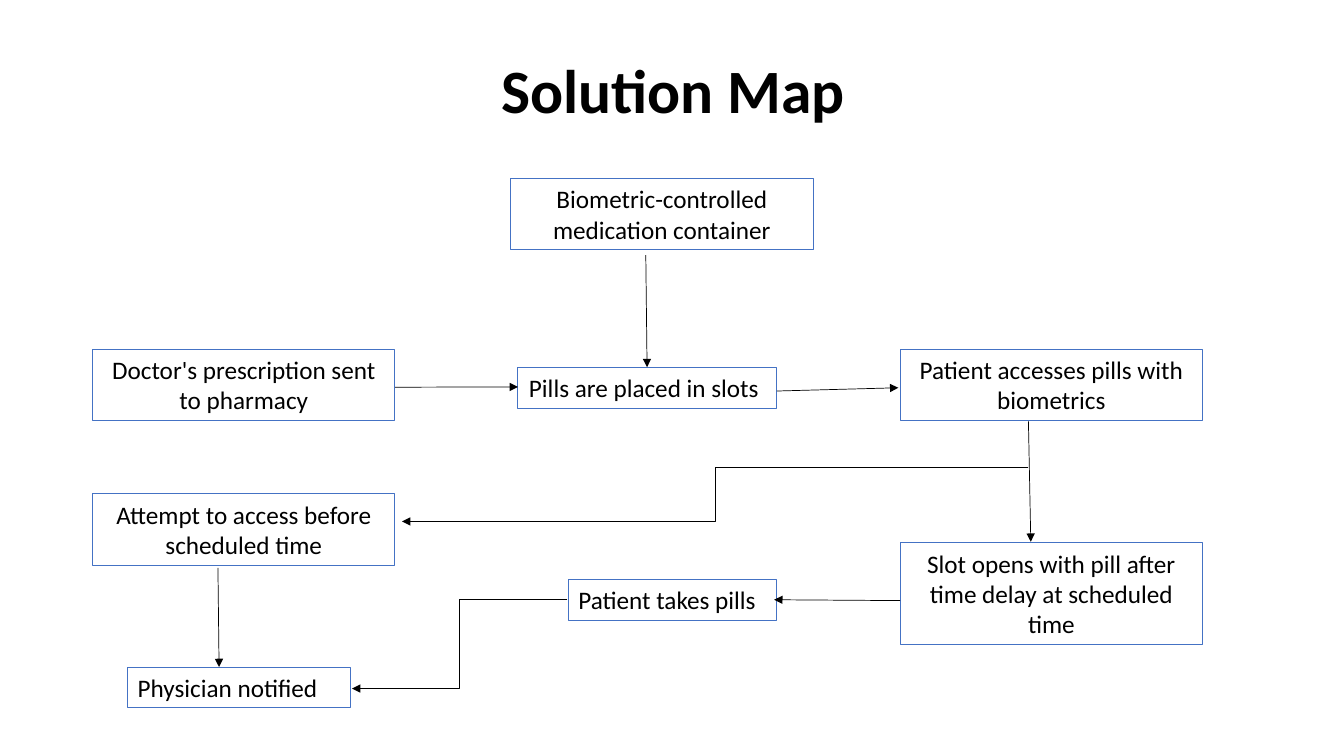
from lxml import etree
from pptx import Presentation
from pptx import util as u
from pptx.dml.color import RGBColor
from pptx.enum import shapes, text
from pptx.oxml.ns import qn

LEFT, RIGHT, WIDE, TWO_LINES, ONE_LINE = 66.2, 643, 216, 51, 29
CENTER, START = text.PP_ALIGN.CENTER, text.PP_ALIGN.LEFT
STRAIGHT, ELBOW = shapes.MSO_CONNECTOR.STRAIGHT, shapes.MSO_CONNECTOR.ELBOW

STEPS = [
    ("Doctor's prescription sent to pharmacy", LEFT, 249.6, WIDE, TWO_LINES, CENTER),
    ("Pills are placed in slots ", 369.5, 262.5, 185, ONE_LINE, CENTER),
    ("Patient accesses pills with biometrics", RIGHT, 249.6, WIDE, TWO_LINES, CENTER),
    ("Slot opens with pill after time delay at scheduled time", RIGHT, 387.8, WIDE, 72.7, CENTER),
    ("Biometric-controlled medication container", 364.8, 127.6, WIDE, TWO_LINES, CENTER),
    ("Patient takes pills", 406, 414, 148.5, ONE_LINE, START),
    ("Attempt to access before scheduled time", LEFT, 352.8, WIDE, TWO_LINES, CENTER),
    ("Physician notified", 91.2, 476.7, 159, ONE_LINE, START),
]

ARROWS = [
    (ELBOW, 734.4, 334, 287.2, 372.5),
    (ELBOW, 405.4, 428, 251.5, 491.8),
    (STRAIGHT, 461.3, 182.2, 462.2, 262.3),
    (STRAIGHT, 155.7, 405.7, 156.5, 476.5),
    (STRAIGHT, 643, 429, 553, 428.4),
    (STRAIGHT, 734.6, 301, 736.3, 387),
    (STRAIGHT, 555, 279.3, 641.7, 277),
    (STRAIGHT, 282.2, 276.6, 370, 276.4),
]


def rgb(value):
    """Turn a hex string into a colour."""
    return RGBColor.from_string(value)


def place(sp, x, y, w, h):
    """Move and size a shape in points."""
    sp.left, sp.top, sp.width, sp.height = (u.Pt(v) for v in (x, y, w, h))


def style(p, size, align, bold=False):
    """Format a paragraph and its runs."""
    p.alignment = align
    for r in p.runs:
        r.font.name = "Calibri"
        r.font.size = u.Pt(size)
        r.font.bold = bold
        r.font.color.rgb = rgb("000000")


def add_title(s, label):
    """Fill and format the title placeholder."""
    sp = s.shapes.title
    place(sp, 67, 18.7, 828, 95.8)
    tf = sp.text_frame
    tf.text = label
    tf.vertical_anchor = text.MSO_ANCHOR.MIDDLE
    tf.paragraphs[0].line_spacing = 0.9
    style(tf.paragraphs[0], 44, CENTER, True)


def add_step(s, label, x, y, w, h, align):
    """Add an outlined box holding one step."""
    sp = s.shapes.add_shape(shapes.MSO_SHAPE.RECTANGLE, *(u.Pt(v) for v in (x, y, w, h)))
    sp.shadow.inherit = False
    sp.fill.background()
    sp.line.color.rgb = rgb("4472C4")
    sp.line.width = u.Pt(0.75)
    tf = sp.text_frame
    tf.text = label
    tf.word_wrap = True
    tf.auto_size = text.MSO_AUTO_SIZE.SHAPE_TO_FIT_TEXT
    tf.vertical_anchor = text.MSO_ANCHOR.TOP
    style(tf.paragraphs[0], 18, align)


def add_arrow(s, kind, *ends):
    """Add a thin connector with an arrowhead at its end."""
    c = s.shapes.add_connector(kind, *(u.Pt(v) for v in ends))
    c.line.color.rgb = rgb("000000")
    c.line.width = u.Pt(0.5)
    etree.SubElement(c.line._get_or_add_ln(), qn("a:tailEnd"), type="triangle")
    etree.SubElement(c._element.spPr, qn("a:effectLst"))


def main():
    """Build the slide and save it."""
    prs = Presentation()
    prs.slide_width, prs.slide_height = u.Pt(960), u.Pt(540)
    s = prs.slides.add_slide(prs.slide_layouts[5])
    add_title(s, "Solution Map")
    for step in STEPS:
        add_step(s, *step)
    for arrow in ARROWS:
        add_arrow(s, *arrow)
    prs.save("out.pptx")


if __name__ == "__main__":
    main()
